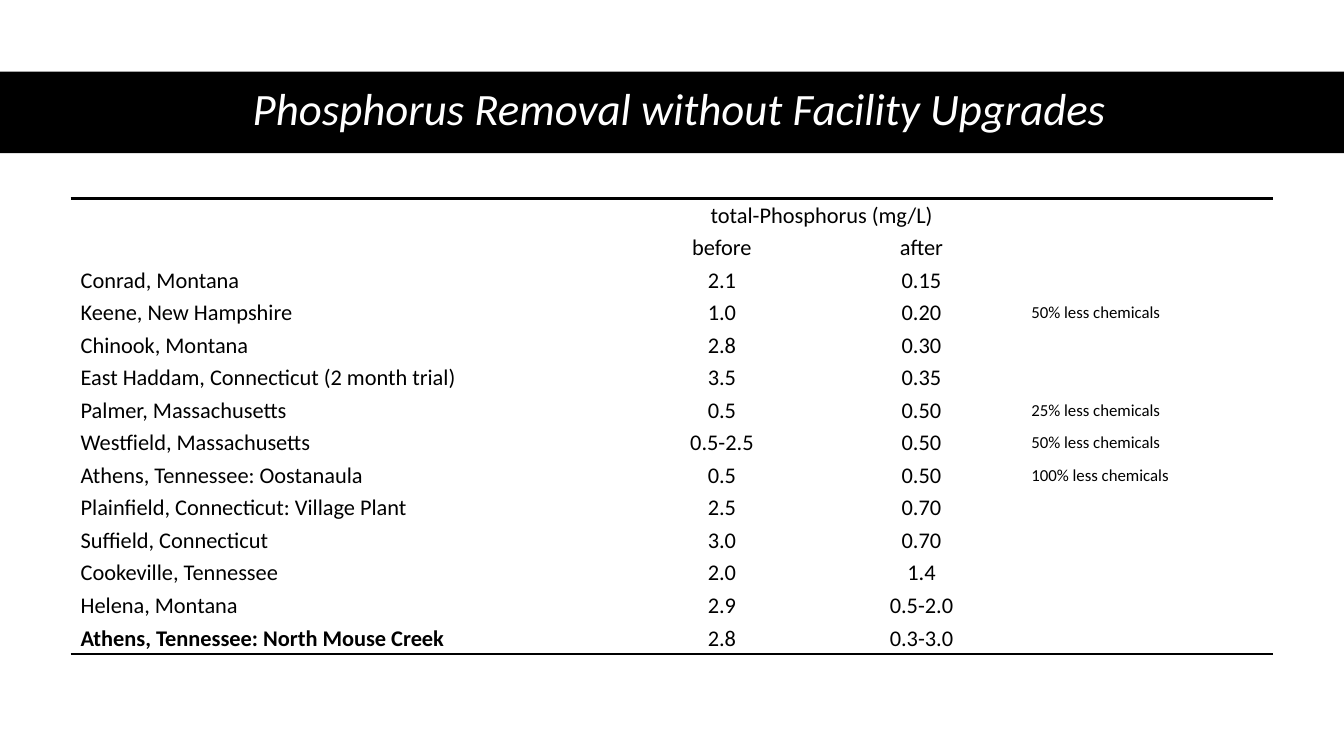
from dataclasses import dataclass

from lxml import etree
from pptx import Presentation
from pptx import util as u
from pptx.dml.color import RGBColor
from pptx.enum import shapes, text
from pptx.oxml.ns import qn


@dataclass(frozen=True)
class Theme:
    font: str = "Calibri"
    ink: str = "000000"
    paper: str = "FFFFFF"
    title_size: int = 32
    body_size: int = 16
    remark_size: int = 12
    rule_width: int = 2
    plain_table: str = "{2D5ABB26-0587-4C30-8999-92F81FD0307C}"


class SlideBuilder:
    """Places elements by percentages of the slide's width and height."""

    def __init__(self, deck, theme):
        self.theme = theme
        self.width, self.height = deck.slide_width, deck.slide_height
        self.slide = deck.slides.add_slide(deck.slide_layouts[5])

    def x(self, share):
        return round(self.width * share / 100)

    def y(self, share):
        return round(self.height * share / 100)

    def box(self, left, top, width, height):
        return self.x(left), self.y(top), self.x(width), self.y(height)

    def style(self, paragraph, size, color, align, bold=False, italic=False):
        paragraph.alignment = align
        font = paragraph.font
        font.name, font.size = self.theme.font, u.Pt(size)
        font.bold, font.italic = bold, italic
        font.color.rgb = RGBColor.from_string(color)

    def band(self, *area):
        band = self.slide.shapes.add_shape(
            shapes.MSO_SHAPE.RECTANGLE, *self.box(*area))
        band.shadow.inherit = False
        band.fill.solid()
        band.fill.fore_color.rgb = RGBColor.from_string(self.theme.ink)
        band.line.fill.background()
        # Send the band behind the title
        self.slide.shapes._spTree.insert(2, band._element)

    def title(self, wording, *area):
        title = self.slide.shapes.title
        title.left, title.top, title.width, title.height = self.box(*area)
        frame = title.text_frame
        frame.text = wording
        frame.word_wrap = True
        frame.auto_size = text.MSO_AUTO_SIZE.NONE
        frame.vertical_anchor = text.MSO_ANCHOR.MIDDLE
        heading = frame.paragraphs[0]
        heading.line_spacing, heading.space_after = 0.9, u.Pt(6)
        self.style(heading, self.theme.title_size, self.theme.paper,
                   text.PP_ALIGN.CENTER, italic=True)

    def rule(self, cell, side):
        line = etree.SubElement(cell._tc.get_or_add_tcPr(), qn(f"a:ln{side}"),
                                w=str(u.Pt(self.theme.rule_width)))
        fill = etree.SubElement(line, qn("a:solidFill"))
        etree.SubElement(fill, qn("a:srgbClr"), val=self.theme.ink)

    def cell(self, cell, wording, size, align, bold):
        cell.text = wording
        cell.vertical_anchor = text.MSO_ANCHOR.MIDDLE
        indented = align == text.PP_ALIGN.LEFT
        cell.margin_left = u.Inches(0.1 if indented else 0.01)
        cell.margin_right = cell.margin_top = u.Inches(0.01)
        cell.margin_bottom = 0
        cell.fill.solid()
        cell.fill.fore_color.rgb = RGBColor.from_string(self.theme.paper)
        self.style(cell.text_frame.paragraphs[0], size, self.theme.ink,
                   align, bold)

    def table(self, rows, widths, left, top, height, bold_site):
        area = self.box(left, top, sum(widths), height)
        table = self.slide.shapes.add_table(len(rows), len(widths), *area).table
        table.first_row = table.horz_banding = False
        table._tbl.tblPr.find(qn("a:tableStyleId")).text = self.theme.plain_table
        for column, width in zip(table.columns, widths):
            column.width = self.x(width)
        center, start = text.PP_ALIGN.CENTER, text.PP_ALIGN.LEFT
        aligns = (start, center, center, start)
        sizes = (self.theme.body_size,) * 3 + (self.theme.remark_size,)
        for r, row in enumerate(rows):
            table.rows[r].height = self.y(height / len(rows))
            for c, wording in enumerate(row):
                cell = table.cell(r, c)
                if r == 0:
                    self.rule(cell, "T")
                if r == len(rows) - 1:
                    self.rule(cell, "B")
                self.cell(cell, wording, sizes[c], aligns[c],
                          wording == bold_site)
        return table


# Plants: site, phosphorus before and after, remark
HEADINGS = [
    ("", "total-Phosphorus (mg/L)", "", ""),
    ("", "before", "after", ""),
]
NORTH_MOUSE_CREEK = "Athens, Tennessee: North Mouse Creek"
PLANTS = [
    ("Conrad, Montana", "2.1", "0.15", ""),
    ("Keene, New Hampshire", "1.0", "0.20", "50% less chemicals"),
    ("Chinook, Montana", "2.8", "0.30", ""),
    ("East Haddam, Connecticut (2 month trial)", "3.5", "0.35", ""),
    ("Palmer, Massachusetts", "0.5", "0.50", "25% less chemicals"),
    ("Westfield, Massachusetts", "0.5-2.5", "0.50", "50% less chemicals"),
    ("Athens, Tennessee: Oostanaula", "0.5", "0.50", "100% less chemicals"),
    ("Plainfield, Connecticut: Village Plant", "2.5", "0.70", ""),
    ("Suffield, Connecticut", "3.0", "0.70", ""),
    ("Cookeville, Tennessee", "2.0", "1.4", ""),
    ("Helena, Montana", "2.9", "0.5-2.0", ""),
    (NORTH_MOUSE_CREEK, "2.8", "0.3-3.0", ""),
]


def main():
    deck = Presentation()
    deck.slide_width, deck.slide_height = u.Inches(13.33), u.Inches(7.5)
    builder = SlideBuilder(deck, Theme())

    # Title on its band
    builder.band(0, 9.47, 100, 10.8)
    builder.title("Phosphorus Removal without Facility Upgrades",
                  4.58, 9.33, 91.97, 10.8)

    # Results by plant, with one heading over both readings
    results = builder.table(HEADINGS + PLANTS, (41.04, 14.85, 14.85, 18.76),
                            left=5.25, top=26.27, height=60.27,
                            bold_site=NORTH_MOUSE_CREEK)
    results.cell(0, 1).merge(results.cell(0, 2))

    deck.save("out.pptx")


if __name__ == "__main__":
    main()
